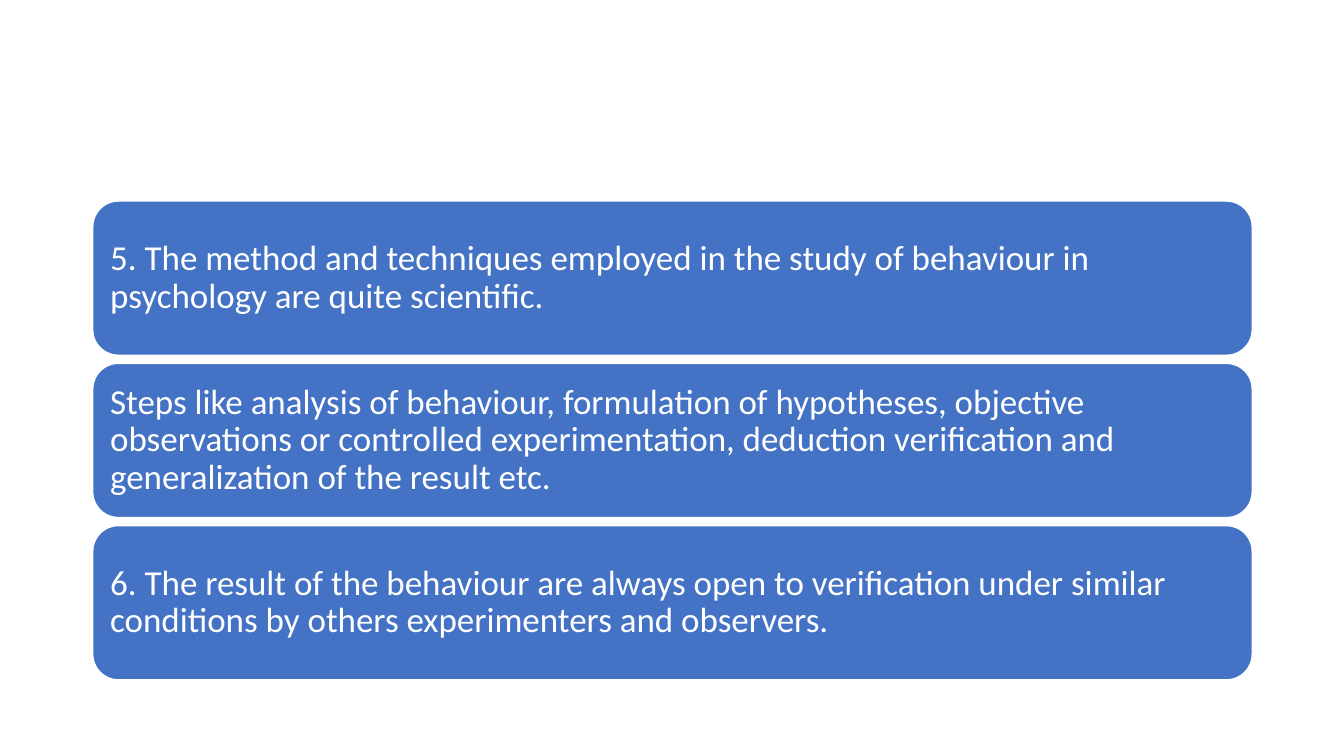
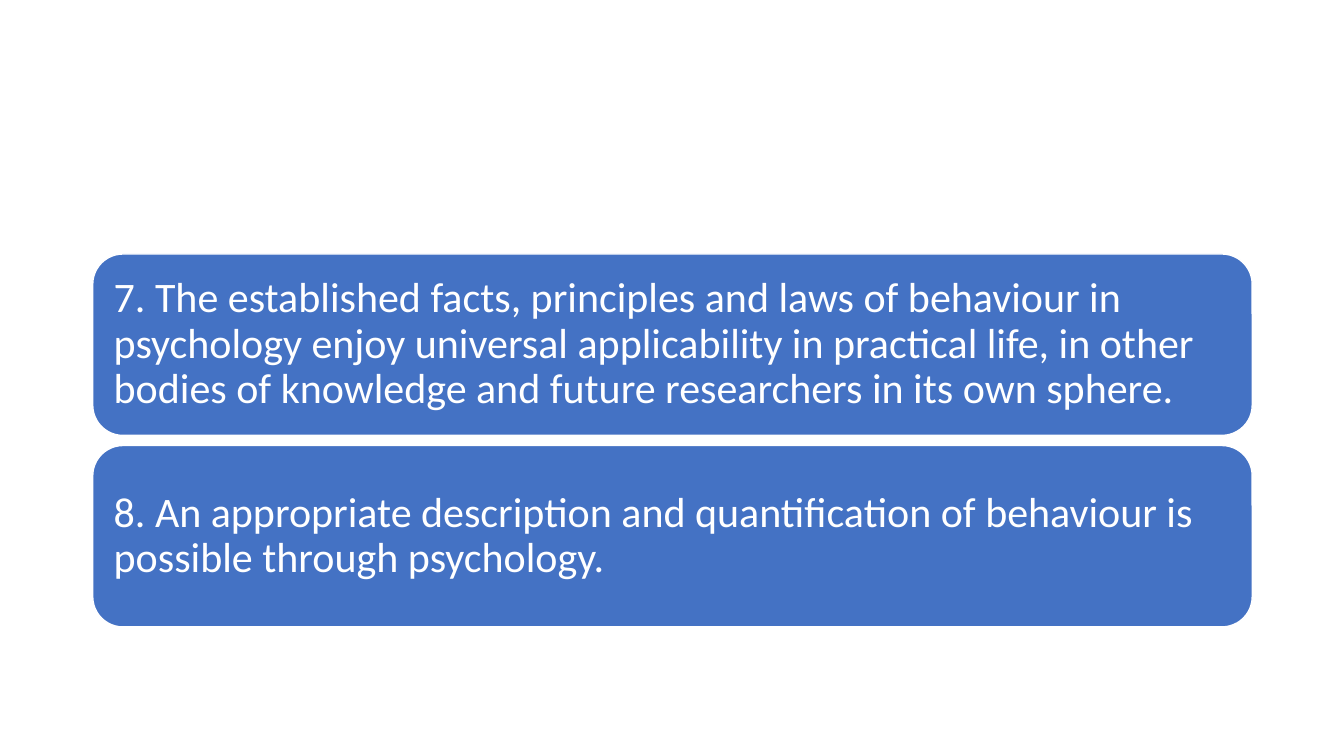
"""Build two slides of numbered statements in vertically centred stacks of rounded panels."""
import dataclasses

import pptx
import pptx.dml.color
import pptx.enum.shapes
import pptx.enum.text
import pptx.util


@dataclasses.dataclass(frozen=True)
class Theme:
    """Colours, type and page geometry in inches."""
    panel: str = "4472C4"
    light: str = "FFFFFF"
    font: str = "Calibri"
    line_spacing: float = 0.9
    outline: float = 1
    width: float = 13.33
    height: float = 7.5
    left: float = 0.92
    stack_width: float = 11.5
    stack_middle: float = 4.37


THEME = Theme()

SLIDES = [
    {
        "size": 25, "panel_height": 1.53, "gap": 0.08, "inset": 0.1,
        "statements": [
            "5. The method and techniques employed in the study of behaviour in psychology are quite scientific.",
            "Steps like analysis of behaviour, formulation of hypotheses, objective observations or controlled "
            "experimentation, deduction verification and generalization of the result etc.",
            "6. The result of the behaviour are always open to verification under similar conditions by others "
            "experimenters and observers.",
        ],
    },
    {
        "size": 30, "panel_height": 1.8, "gap": 0.1, "inset": 0.12,
        "statements": [
            "7. The established facts, principles and laws of behaviour in psychology enjoy universal applicability "
            "in practical life, in other bodies of knowledge and future researchers in its own sphere.",
            "8. An appropriate description and quantification of behaviour is possible through psychology.",
        ],
    },
]


def colour(value):
    return pptx.dml.color.RGBColor.from_string(value)


def add_panel(slide, top, statement, content):
    inches = pptx.util.Inches
    shape = slide.shapes.add_shape(
        pptx.enum.shapes.MSO_SHAPE.ROUNDED_RECTANGLE,
        inches(THEME.left), inches(top), inches(THEME.stack_width), inches(content["panel_height"]))
    shape.shadow.inherit = False
    shape.fill.solid()
    shape.fill.fore_color.rgb = colour(THEME.panel)
    shape.line.color.rgb = colour(THEME.light)
    shape.line.width = pptx.util.Pt(THEME.outline)

    frame = shape.text_frame
    frame.word_wrap = True
    frame.vertical_anchor = pptx.enum.text.MSO_ANCHOR.MIDDLE
    for side in ("left", "top", "right", "bottom"):
        setattr(frame, f"margin_{side}", inches(content["inset"]))

    paragraph = frame.paragraphs[0]
    paragraph.alignment = pptx.enum.text.PP_ALIGN.LEFT
    paragraph.line_spacing = THEME.line_spacing
    run = paragraph.add_run()
    run.text = statement
    run.font.name = THEME.font
    run.font.size = pptx.util.Pt(content["size"])
    run.font.color.rgb = colour(THEME.light)


def add_stack(slide, content):
    statements = content["statements"]
    pitch = content["panel_height"] + content["gap"]
    first_top = THEME.stack_middle - (len(statements) * pitch - content["gap"]) / 2
    for row, statement in enumerate(statements):
        add_panel(slide, first_top + row * pitch, statement, content)


def main():
    presentation = pptx.Presentation()
    presentation.slide_width = pptx.util.Inches(THEME.width)
    presentation.slide_height = pptx.util.Inches(THEME.height)
    blank_layout = presentation.slide_layouts[6]
    for content in SLIDES:
        add_stack(presentation.slides.add_slide(blank_layout), content)
    presentation.save("out.pptx")


if __name__ == "__main__":
    main()
